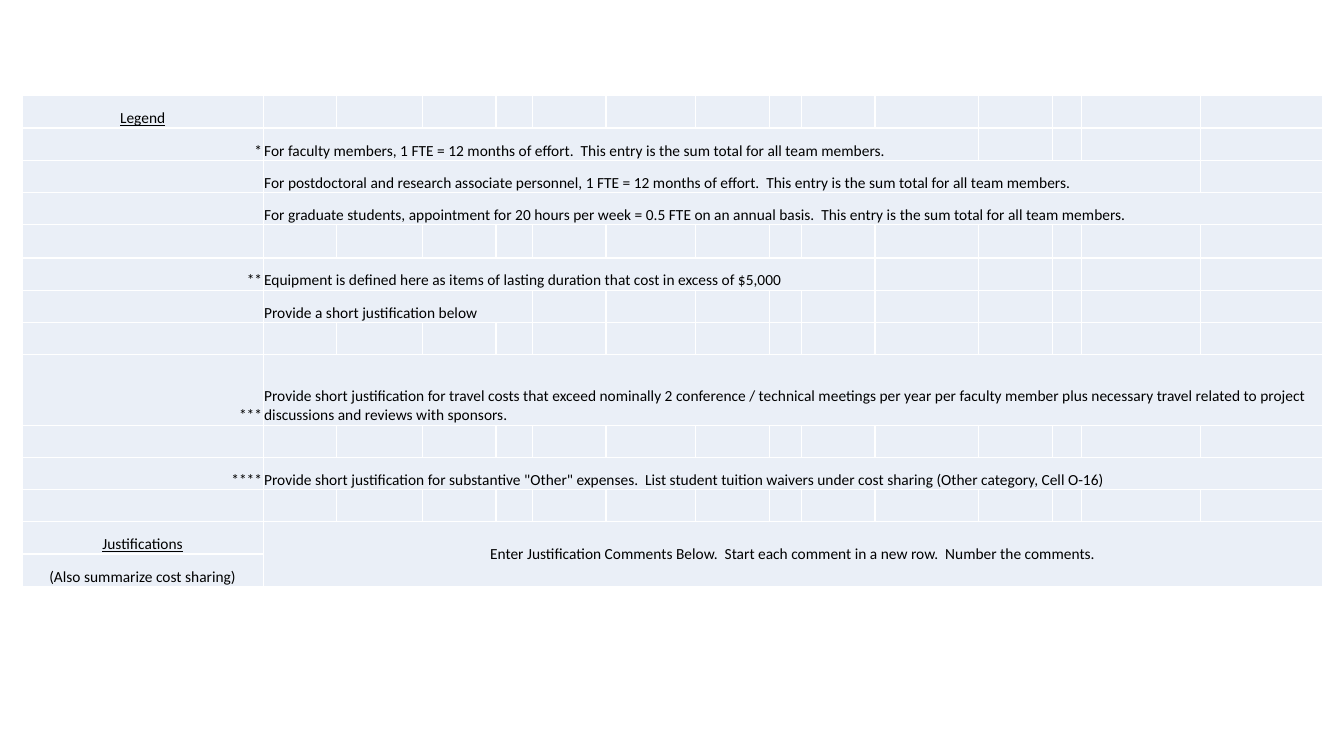
import pptx
import pptx.util
import pptx.oxml
import pptx.oxml.ns
import pptx.dml.color
import pptx.enum.text

Inches, Pt = pptx.util.Inches, pptx.util.Pt
ALIGN, ANCHOR = pptx.enum.text.PP_ALIGN, pptx.enum.text.MSO_ANCHOR

# Content
COLORS = {"cell": "EAEFF7", "border": "FFFFFF", "text": "000000"}
FONT, SIZE = "Calibri", 11
LEFT, TOP = 0.22, 0.95
COL_WIDTHS = [2.39, 0.73, 0.85, 0.73, 0.36, 0.73, 0.89, 0.73, 0.32, 0.73,
              1.03, 0.73, 0.29, 1.18, 1.21]
ROW_COUNT, ROW_HEIGHT = 14, 0.32
TALL_ROWS = {4: 0.33, 8: 0.7}

# row: (text, underlined)
HEADINGS = {
    0: ("Legend", True),
    12: ("Justifications", True),
    13: ("(Also summarize cost sharing)", False),
}
# row: (marker, note, columns spanned by the note)
NOTES = {
    1: ("*", "For faculty members, 1 FTE = 12 months of effort.  This entry is the sum total for all team members.", 10),
    2: ("", "For postdoctoral and research associate personnel, 1 FTE = 12 months of effort.  This entry is the sum total for all team members.", 13),
    3: ("", "For graduate students, appointment for 20 hours per week = 0.5 FTE on an annual basis.  This entry is the sum total for all team members.", 14),
    5: ("**", "Equipment is defined here as items of lasting duration that cost in excess of $5,000", 9),
    6: ("", "Provide a short justification below", 4),
    8: ("***", "Provide short justification for travel costs that exceed nominally 2 conference / technical meetings per year per faculty member plus necessary travel related to project discussions and reviews with sponsors.", 14),
    10: ("****", "Provide short justification for substantive \"Other\" expenses.  List student tuition waivers under cost sharing (Other category, Cell O-16)", 14),
}
COMMENTS = "Enter Justification Comments Below.  Start each comment in a new row.  Number the comments."


def rgb(name):
    return pptx.dml.color.RGBColor.from_string(COLORS[name])


def write(cell, text, align=ALIGN.LEFT, anchor=ANCHOR.BOTTOM, underline=False):
    cell.vertical_anchor = anchor
    p = cell.text_frame.paragraphs[0]
    p.alignment = align
    if not text:
        return
    r = p.add_run()
    r.text = text
    r.font.name, r.font.size = FONT, Pt(SIZE)
    r.font.underline = underline
    r.font.color.rgb = rgb("text")


def style_cell(cell):
    cell.margin_left = cell.margin_right = cell.margin_top = Inches(0.01)
    cell.margin_bottom = 0
    cell.fill.solid()
    cell.fill.fore_color.rgb = rgb("cell")
    # Cell borders
    tc_pr = cell._tc.get_or_add_tcPr()
    for i, side in enumerate(("lnL", "lnR", "lnT", "lnB")):
        tc_pr.insert(i, pptx.oxml.parse_xml(
            f'<a:{side} {pptx.oxml.ns.nsdecls("a")} w="12700"><a:solidFill>'
            f'<a:srgbClr val="{COLORS["border"]}"/></a:solidFill></a:{side}>'))
    # Text size of cells that stay empty
    p = cell.text_frame.paragraphs[0]
    p._p.append(pptx.oxml.parse_xml(
        f'<a:endParaRPr {pptx.oxml.ns.nsdecls("a")} sz="{SIZE * 100}"/>'))


def main():
    prs = pptx.Presentation()
    prs.slide_width, prs.slide_height = Inches(13.33), Inches(7.5)
    s = prs.slides.add_slide(prs.slide_layouts[6])

    # Table grid
    heights = [TALL_ROWS.get(i, ROW_HEIGHT) for i in range(ROW_COUNT)]
    table = s.shapes.add_table(
        ROW_COUNT, len(COL_WIDTHS), Inches(LEFT), Inches(TOP),
        Inches(sum(COL_WIDTHS)), Inches(sum(heights))).table
    table.first_row = table.horz_banding = False
    for column, width in zip(table.columns, COL_WIDTHS):
        column.width = Inches(width)
    for row, height in zip(table.rows, heights):
        row.height = Inches(height)
    for cell in table.iter_cells():
        style_cell(cell)

    # Headings in the first column
    for row, (text, underline) in HEADINGS.items():
        write(table.cell(row, 0), text, align=ALIGN.CENTER, underline=underline)

    # Legend notes with their markers
    for row, (marker, note, span) in NOTES.items():
        write(table.cell(row, 0), marker, align=ALIGN.RIGHT)
        table.cell(row, 1).merge(table.cell(row, span))
        write(table.cell(row, 1), note)

    # Justification comments
    table.cell(12, 1).merge(table.cell(13, len(COL_WIDTHS) - 1))
    write(table.cell(12, 1), COMMENTS, align=ALIGN.CENTER, anchor=ANCHOR.MIDDLE)

    prs.save("out.pptx")


if __name__ == "__main__":
    main()
